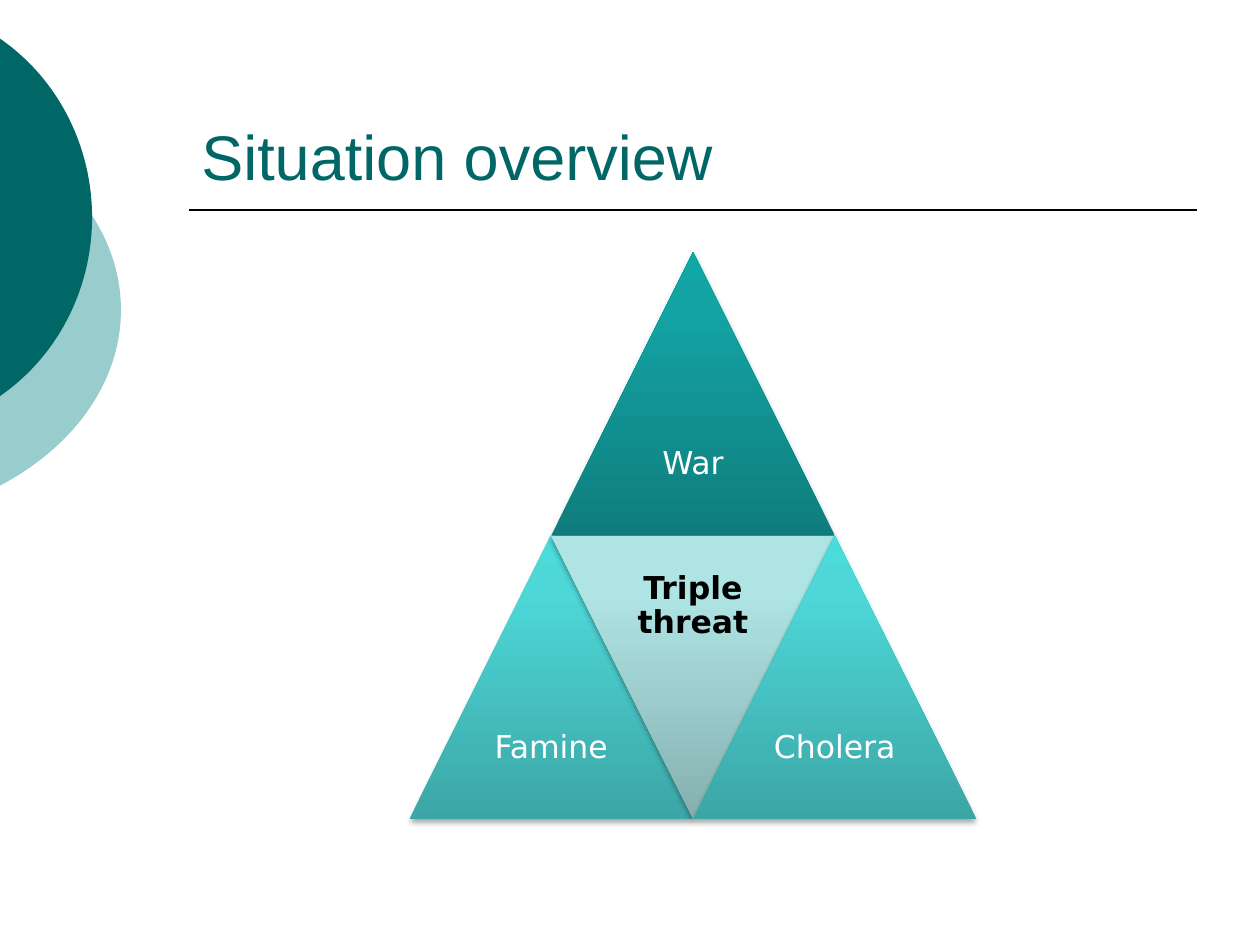
from pptx import Presentation
from pptx.dml.color import RGBColor
from pptx.enum.shapes import MSO_CONNECTOR, MSO_SHAPE
from pptx.enum.text import MSO_ANCHOR, PP_ALIGN
from pptx.oxml import parse_xml
from pptx.oxml.ns import nsdecls, qn
from pptx.util import Pt
from lxml import etree

STRAIGHT = MSO_CONNECTOR.STRAIGHT
TRIANGLE = MSO_SHAPE.ISOSCELES_TRIANGLE
BOTTOM, MIDDLE = MSO_ANCHOR.BOTTOM, MSO_ANCHOR.MIDDLE
LEFT, CENTER = PP_ALIGN.LEFT, PP_ALIGN.CENTER

DARK_TEAL = RGBColor(0x00, 0x66, 0x66)
PALE_TEAL = RGBColor(0x99, 0xCC, 0xCC)
BLACK = RGBColor(0x00, 0x00, 0x00)
WHITE = RGBColor(0xFF, 0xFF, 0xFF)

# Gradient colours from bottom to top, at these percentages
STOPS = (0, 80, 100)
DEEP = [RGBColor(0x0F, 0x7D, 0x7D), RGBColor(0x14, 0xA3, 0xA3), RGBColor(0x11, 0xA6, 0xA6)]
BRIGHT = [RGBColor(0x3C, 0xA6, 0xA6), RGBColor(0x4E, 0xD7, 0xD7), RGBColor(0x4B, 0xDB, 0xDB)]
LIGHT = [RGBColor(0x86, 0xB0, 0xB0), RGBColor(0xAF, 0xE4, 0xE4), RGBColor(0xAE, 0xE6, 0xE6)]

SIDE = 162
PYRAMID_LEFT, PYRAMID_TOP = 234, 144

# Frame of each whole ellipse, and the curve of the part on the slide:
# a start point, then three Bezier points for each half
PALE_FRAME = (-254.9, 54, 324, 246.2)
PALE_CURVE = [(-0.7, 76.3), (43.2, 99.4), (69.1, 136.8), (69.1, 177.1),
              (69.1, 217.4), (43.2, 254.9), (-0.7, 277.9)]
DARK_FRAME = (-190.8, 0, 243.4, 248.4)
DARK_CURVE = [(-0.7, 21.6), (33.1, 44.6), (52.6, 83.5), (52.6, 124.2),
              (52.6, 164.9), (33.1, 203.8), (-0.7, 226.8)]


def add_arc(slide, frame, curve, color):
    """Add the visible part of an ellipse, drawn with true curves."""
    left, top, width, height = frame
    builder = slide.shapes.build_freeform(*curve[0], scale=Pt(1))
    builder.add_line_segments(curve[1:], close=True)
    arc = builder.convert_to_shape()
    arc.left, arc.top, arc.width, arc.height = map(Pt, frame)

    outline = next(arc._element.iter(qn("a:path")))
    for segment in list(outline):
        outline.remove(segment)
    outline.set("w", str(Pt(width)))
    outline.set("h", str(Pt(height)))
    commands = (("a:moveTo", curve[:1]), ("a:cubicBezTo", curve[1:4]),
                ("a:cubicBezTo", curve[4:]))
    for tag, points in commands:
        command = etree.SubElement(outline, qn(tag))
        for x, y in points:
            etree.SubElement(command, qn("a:pt"), x=str(Pt(x - left)), y=str(Pt(y - top)))
    etree.SubElement(outline, qn("a:close"))

    arc.shadow.inherit = False
    arc.fill.solid()
    arc.fill.fore_color.rgb = color
    arc.line.fill.background()


def add_rule(slide, left, right, y):
    rule = slide.shapes.add_connector(STRAIGHT, Pt(left), Pt(y), Pt(right), Pt(y))
    rule.line.color.rgb = BLACK
    rule.line.width = Pt(1)
    etree.SubElement(rule._element.spPr, qn("a:effectLst"))


def add_text(slide, text, left, top, width, height, font, size, color,
             align=CENTER, anchor=MIDDLE, bold=False):
    box = slide.shapes.add_textbox(Pt(left), Pt(top), Pt(width), Pt(height))
    frame = box.text_frame
    frame.word_wrap = True
    frame.vertical_anchor = anchor
    frame.text = text
    para = frame.paragraphs[0]
    para.alignment = align
    style = para.runs[0].font
    style.name, style.size, style.bold = font, Pt(size), bold
    style.color.rgb = color
    return box


def set_gradient(shape, colors):
    """Fill upright from bottom to top, whatever the shape's rotation."""
    shape.fill.gradient()
    shape.fill.gradient_angle = 90
    gradient = shape._element.spPr.find(qn("a:gradFill"))
    gradient.set("rotWithShape", "0")
    stop_list = gradient.find(qn("a:gsLst"))
    for stop in list(stop_list):
        stop_list.remove(stop)
    for percent, color in zip(STOPS, colors):
        stop = etree.SubElement(stop_list, qn("a:gs"), pos=str(percent * 1000))
        etree.SubElement(stop, qn("a:srgbClr"), val=str(color))


def add_soft_shadow(shape):
    shape.shadow.inherit = False
    shape._element.spPr.find(qn("a:effectLst")).append(parse_xml(
        f'<a:outerShdw {nsdecls("a")} blurRad="{Pt(3.1)}" dist="{Pt(1.8)}" '
        'dir="5400000" rotWithShape="0"><a:srgbClr val="000000">'
        '<a:alpha val="35000"/></a:srgbClr></a:outerShdw>'))


def add_threat(slide, label, column, row, colors, inverted=False):
    """Add a labelled triangle; columns count in half sides."""
    left, top = PYRAMID_LEFT + column * SIDE / 2, PYRAMID_TOP + row * SIDE
    triangle = slide.shapes.add_shape(TRIANGLE, Pt(left), Pt(top), Pt(SIDE), Pt(SIDE))
    triangle.rotation = 180 if inverted else 0
    triangle.line.fill.background()
    set_gradient(triangle, colors)
    add_soft_shadow(triangle)

    label_top = top if inverted else top + SIDE / 2
    box = add_text(slide, label, left + SIDE / 4, label_top, SIDE / 2, SIDE / 2,
                   "DejaVu Sans", 18, BLACK if inverted else WHITE, bold=inverted)
    frame = box.text_frame
    frame.margin_left = frame.margin_right = Pt(5)
    frame.margin_top = frame.margin_bottom = Pt(5)
    frame.paragraphs[0].line_spacing = 0.9
    frame.paragraphs[0].space_after = Pt(6.3)


def main():
    deck = Presentation()
    deck.slide_width, deck.slide_height = Pt(720), Pt(540)
    slide = deck.slides.add_slide(deck.slide_layouts[6])

    add_arc(slide, PALE_FRAME, PALE_CURVE, PALE_TEAL)
    add_arc(slide, DARK_FRAME, DARK_CURVE, DARK_TEAL)
    add_rule(slide, 108, 684, 120)
    add_text(slide, "Situation overview", 108, 24, 576, 90, "Arial", 36,
             DARK_TEAL, align=LEFT, anchor=BOTTOM)

    add_threat(slide, "War", 1, 0, DEEP)
    add_threat(slide, "Famine", 0, 1, BRIGHT)
    add_threat(slide, "Triple threat", 1, 1, LIGHT, inverted=True)
    add_threat(slide, "Cholera", 2, 1, BRIGHT)

    deck.save("out.pptx")


if __name__ == "__main__":
    main()
